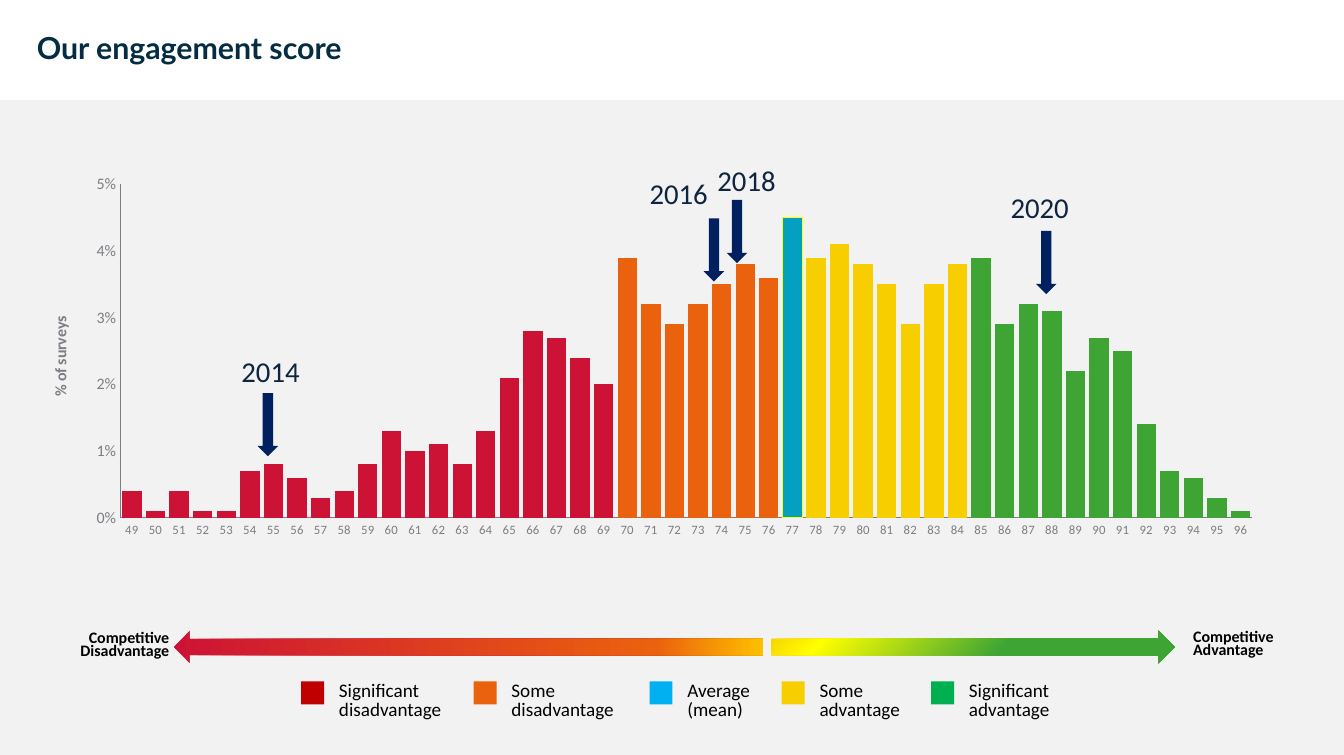
from lxml import etree
from pptx import Presentation
from pptx.chart.data import CategoryChartData
from pptx.dml.color import RGBColor
from pptx.enum.chart import XL_CHART_TYPE, XL_TICK_MARK
from pptx.enum.shapes import MSO_SHAPE
from pptx.enum.text import MSO_ANCHOR, PP_ALIGN
from pptx.oxml import parse_xml
from pptx.oxml.ns import nsdecls, qn
from pptx.util import Inches, Pt

COLUMN = XL_CHART_TYPE.COLUMN_CLUSTERED
NO_TICK = XL_TICK_MARK.NONE
RECT, RIGHT, DOWN = MSO_SHAPE.RECTANGLE, MSO_SHAPE.RIGHT_ARROW, MSO_SHAPE.DOWN_ARROW
BOTTOM = MSO_ANCHOR.BOTTOM
ALIGN_LEFT, ALIGN_RIGHT = PP_ALIGN.LEFT, PP_ALIGN.RIGHT

COLORS = {
    "panel": "F2F2F2", "title": "042D43", "text": "000000", "axis": "7E7D83",
    "year": "0F243E", "marker": "002060", "red": "CD1335", "orange": "EB620E",
    "blue": "04A0C2", "yellow": "F7CF00", "green": "3EA535", "bright": "FFFF00",
    "amber": "FFC000", "key red": "C00000", "key blue": "00B0F0",
    "key green": "00B050",
}
FIRST = 49
SHARES = [
    0.004, 0.001, 0.004, 0.001, 0.001, 0.007, 0.008, 0.006, 0.003, 0.004,
    0.008, 0.013, 0.01, 0.011, 0.008, 0.013, 0.021, 0.028, 0.027, 0.024,
    0.02, 0.039, 0.032, 0.029, 0.032, 0.035, 0.038, 0.036, 0.045, 0.039,
    0.041, 0.038, 0.035, 0.029, 0.035, 0.038, 0.039, 0.029, 0.032, 0.031,
    0.022, 0.027, 0.025, 0.014, 0.007, 0.006, 0.003, 0.001,
]
# Last score of each colour band
BANDS = [(69, "red"), (76, "orange"), (77, "blue"), (84, "yellow"), (96, "green")]
MEAN = 77
# Year, label left and top, arrow left and top
YEARS = [
    ("2014", 2.1, 3.08, 2.24, 3.42),
    ("2016", 5.65, 1.53, 6.12, 1.9),
    ("2018", 6.24, 1.42, 6.32, 1.74),
    ("2020", 8.79, 1.65, 9.01, 2.01),
]
# Swatch left, text width, colour, text
KEYS = [
    (2.62, 1.98, "key red", "Significant\ndisadvantage"),
    (4.12, 1.42, "orange", "Some disadvantage"),
    (5.65, 1.18, "key blue", "Average (mean)"),
    (6.8, 1.38, "yellow", "Some\nadvantage"),
    (8.1, 1.53, "key green", "Significant advantage"),
]


def rgb(name):
    return RGBColor.from_string(COLORS[name])


def set_font(font, size, color, bold=False, face="Calibri"):
    font.name, font.size, font.bold = face, Pt(size), bold
    font.color.rgb = rgb(color)


def no_inset(frame):
    frame.margin_left = frame.margin_right = 0
    frame.margin_top = frame.margin_bottom = 0


def add_title(slide, text):
    title = slide.shapes.title
    title.left, title.top = Inches(0.32), Inches(0.27)
    title.width, title.height = Inches(10.09), Inches(0.3)
    frame = title.text_frame
    frame.text = text
    frame.vertical_anchor = BOTTOM
    no_inset(frame)
    para = frame.paragraphs[0]
    para.alignment, para.line_spacing = ALIGN_LEFT, Pt(23.1)
    set_font(para.runs[0].font, 19, "title", True, "Lato")


def add_text(slide, box, text, size, color="text", bold=False, align=ALIGN_LEFT,
             lead=None):
    frame = slide.shapes.add_textbox(*map(Inches, box)).text_frame
    frame.word_wrap = True
    frame.text = text
    for para in frame.paragraphs:
        para.alignment = align
        if lead:
            para.line_spacing = Pt(lead)
        set_font(para.runs[0].font, size, color, bold)
    return frame


def add_shape(slide, kind, box, color=None):
    shape = slide.shapes.add_shape(kind, *map(Inches, box))
    shape.shadow.inherit = False
    shape.line.fill.background()
    if color:
        shape.fill.solid()
        shape.fill.fore_color.rgb = rgb(color)
    return shape


def add_fade(slide, box, stops, angle, turn=0):
    """Add an arrow with a gradient of (percent, colour) stops."""
    shape = add_shape(slide, RIGHT, box)
    shape.rotation = turn
    shape.fill.gradient()
    shape.fill.gradient_angle = angle
    ramp = next(shape.fill._xPr.iter(qn("a:gsLst")))
    for old in list(ramp):
        ramp.remove(old)
    for spot, color in stops:
        stop = etree.SubElement(ramp, qn("a:gs"), pos=str(spot * 1000))
        etree.SubElement(stop, qn("a:srgbClr"), val=COLORS[color])


def place_plot(chart, x, y, w, h):
    area = chart._chartSpace.chart.plotArea
    for old in area.findall(qn("c:layout")):
        area.remove(old)
    area.insert(0, parse_xml(
        f'<c:layout {nsdecls("c")}><c:manualLayout><c:layoutTarget val="inner"/>'
        '<c:xMode val="edge"/><c:yMode val="edge"/>'
        f'<c:x val="{x}"/><c:y val="{y}"/><c:w val="{w}"/><c:h val="{h}"/>'
        '</c:manualLayout></c:layout>'))


def style_axis(axis, size):
    axis.has_major_gridlines = False
    axis.major_tick_mark = axis.minor_tick_mark = NO_TICK
    axis.format.line.color.rgb = rgb("axis")
    set_font(axis.tick_labels.font, size, "axis")


def add_chart(slide):
    data = CategoryChartData(number_format="0%")
    data.categories = [str(FIRST + i) for i in range(len(SHARES))]
    data.add_series("Series 1", SHARES)
    box = map(Inches, (0.41, 1.24, 10.59, 3.63))
    chart = slide.shapes.add_chart(COLUMN, *box, data).chart
    chart.has_legend = chart.has_title = False
    set_font(chart.font, 10, "text")
    place_plot(chart, 0.06, 0.1, 0.93, 0.8)

    style_axis(chart.category_axis, 8)
    axis = chart.value_axis
    style_axis(axis, 10)
    axis.minimum_scale, axis.maximum_scale, axis.major_unit = 0, 0.05, 0.01
    axis.tick_labels.number_format = "0%"
    axis.tick_labels.number_format_is_linked = False
    frame = axis.axis_title.text_frame
    frame.text = "% of surveys"
    set_font(frame.paragraphs[0].runs[0].font, 10, "axis", True)

    plot = chart.plots[0]
    plot.gap_width, plot.vary_by_categories = 22, False
    bars = plot.series[0]
    bars.format.fill.solid()
    bars.format.fill.fore_color.rgb = rgb("key blue")
    start = FIRST
    for last, color in BANDS:
        for score in range(start, last + 1):
            fill = bars.points[score - FIRST].format.fill
            fill.solid()
            fill.fore_color.rgb = rgb(color)
        start = last + 1
    bars.points[MEAN - FIRST].format.line.color.rgb = rgb("bright")


def add_year(slide, year, left, top, tip_x, tip_y):
    no_inset(add_text(slide, (left, top, 0.79, 0.3), year, 18, "year"))
    add_shape(slide, DOWN, (tip_x, tip_y, 0.18, 0.55), "marker")


def add_key(slide, left, width, color, text):
    add_shape(slide, RECT, (left, 5.93, 0.2, 0.2), color)
    add_text(slide, (left + 0.23, 5.89, width, 0.44), text, 12, lead=12)


def main():
    deck = Presentation()
    deck.slide_width, deck.slide_height = Inches(11.69), Inches(6.57)
    slide = deck.slides.add_slide(deck.slide_layouts[5])
    add_shape(slide, RECT, (0, 0.87, 11.69, 5.7), "panel")
    add_title(slide, "Our engagement score")
    add_chart(slide)

    add_text(slide, (0.33, 5.47, 1.24, 0.33), "Competitive Disadvantage", 10,
             bold=True, align=ALIGN_RIGHT, lead=8)
    add_text(slide, (10.28, 5.46, 1.26, 0.33), "Competitive Advantage", 10,
             bold=True, lead=8)
    add_fade(slide, (6.71, 5.49, 3.51, 0.28),
             [(0, "yellow"), (14, "bright"), (57, "green"), (100, "green")], 315)
    add_fade(slide, (1.51, 5.49, 5.13, 0.28),
             [(0, "red"), (82, "orange"), (100, "amber")], 180, turn=180)
    for key in KEYS:
        add_key(slide, *key)
    for year in YEARS:
        add_year(slide, *year)
    deck.save("out.pptx")


if __name__ == "__main__":
    main()
